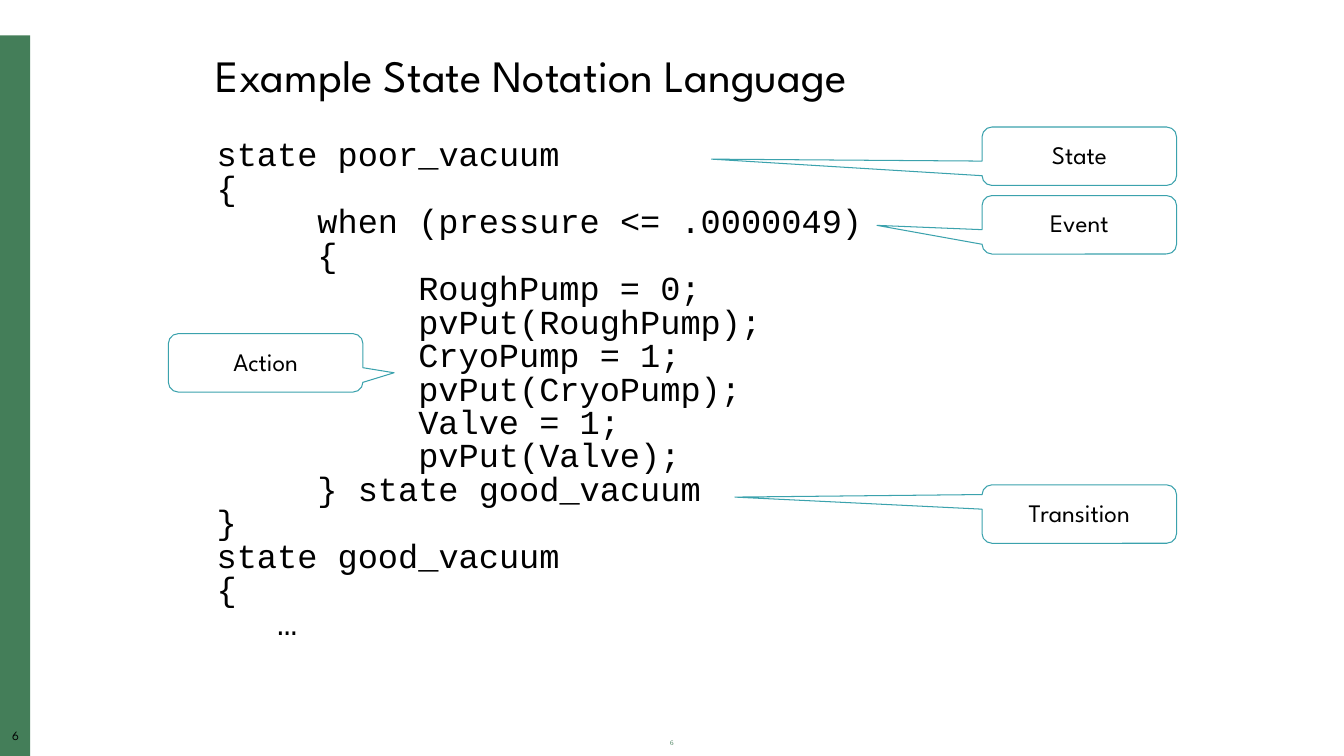
import pptx
import pptx.util
import pptx.dml.color
import pptx.enum.shapes
import pptx.enum.text
import pptx.oxml
import pptx.oxml.ns

Inches, Pt = pptx.util.Inches, pptx.util.Pt
SHAPE = pptx.enum.shapes.MSO_SHAPE
ALIGN = pptx.enum.text.PP_ALIGN
ANCHOR = pptx.enum.text.MSO_ANCHOR

COLORS = {"ink": "000000", "green": "447E59", "teal": "3BA2AD", "white": "FFFFFF"}
SANS, SERIF, MONO = "League Spartan", "Times New Roman", "Courier New"

CODE = [
    "state poor_vacuum\v{",
    "\twhen (pressure <= .0000049)\v     {",
    "\t\tRoughPump = 0;",
    "\t\tpvPut(RoughPump);",
    "\t\tCryoPump = 1;",
    "\t\tpvPut(CryoPump);",
    "\t\tValve = 1;",
    "\t\tpvPut(Valve);",
    "\t} state good_vacuum",
    "}",
    "state good_vacuum",
    "{",
    "   …",
]

# Label, left, top, and the tip's offset from the centre in box widths and heights
NOTES = [
    ("State", 9.74, 1.26, -1.89, 0.05),
    ("Event", 9.74, 1.94, -1.04, 0.01),
    ("Action", 1.67, 3.31, 0.66, 0.17),
    ("Transition", 9.74, 4.81, -1.77, -0.29),
]


def color(name):
    return pptx.dml.color.RGBColor.from_string(COLORS[name])


class Deck:
    def __init__(self):
        self.prs = pptx.Presentation()
        self.prs.slide_width = Inches(13.33)
        self.prs.slide_height = Inches(7.5)
        self.slide = self.prs.slides.add_slide(self.prs.slide_layouts[6])

    def fill(self, frame, lines, size, font=SANS, ink="ink", align=ALIGN.LEFT,
             anchor=ANCHOR.TOP, pad=(0.1, 0.05, 0.1, 0.05), space=0.9, tabs=0):
        frame.word_wrap = True
        frame.vertical_anchor = anchor
        (frame.margin_left, frame.margin_top,
         frame.margin_right, frame.margin_bottom) = map(Inches, pad)
        for i, line in enumerate(lines):
            par = frame.add_paragraph() if i else frame.paragraphs[0]
            par.text = line
            par.alignment = align
            par.line_spacing = space
            if tabs:
                self.stops(par, tabs)
            par.font.name = font
            par.font.size = Pt(size)
            par.font.color.rgb = color(ink)

    def stops(self, par, count):
        props = par._p.get_or_add_pPr()
        group = pptx.oxml.parse_xml(f"<a:tabLst {pptx.oxml.ns.nsdecls('a')}/>")
        for i in range(1, count + 1):
            stop = group.makeelement(pptx.oxml.ns.qn("a:tab"),
                                     {"pos": str(Inches(i)), "algn": "l"})
            group.append(stop)
        props.append(group)

    def text(self, left, top, width, height, lines, size, **style):
        box = self.slide.shapes.add_textbox(*map(Inches, (left, top, width, height)))
        self.fill(box.text_frame, lines, size, **style)

    def shape(self, kind, left, top, width, height, fill, line=None):
        item = self.slide.shapes.add_shape(kind, *map(Inches, (left, top, width, height)))
        item.shadow.inherit = False
        item.fill.solid()
        item.fill.fore_color.rgb = color(fill)
        if line:
            item.line.color.rgb = color(line)
            item.line.width = Pt(0.75)
        else:
            item.line.fill.background()
        return item

    def note(self, label, left, top, dx, dy):
        item = self.shape(SHAPE.ROUNDED_RECTANGULAR_CALLOUT, left, top, 1.93, 0.58,
                          "white", "teal")
        for i, value in enumerate((dx, dy, 0.17)):
            item.adjustments[i] = value
        self.fill(item.text_frame, [label], 18, align=ALIGN.CENTER,
                  anchor=ANCHOR.MIDDLE, pad=[0.05] * 4)


def main():
    deck = Deck()

    # Side bar and page numbers
    deck.shape(SHAPE.RECTANGLE, 0, 0.35, 0.3, 7.15, "green")
    deck.text(0, 7.24, 0.31, 0.17, ["6"], 9, align=ALIGN.CENTER, pad=[0] * 4)
    deck.text(5.08, 7.29, 3.17, 0.2, ["6"], 5, font=SERIF, ink="green",
              align=ALIGN.CENTER)

    # Title and code
    deck.text(2.04, 0.47, 8.7, 0.59, ["Example State Notation Language"], 32,
              anchor=ANCHOR.BOTTOM)
    deck.text(2.05, 1.35, 6.88, 5.6, CODE, 24, font=MONO, space=0.83, tabs=8,
              pad=(0.1, 0.04, 0.1, 0.05))

    # Callouts
    for note in NOTES:
        deck.note(*note)

    deck.prs.save("out.pptx")


if __name__ == "__main__":
    main()
